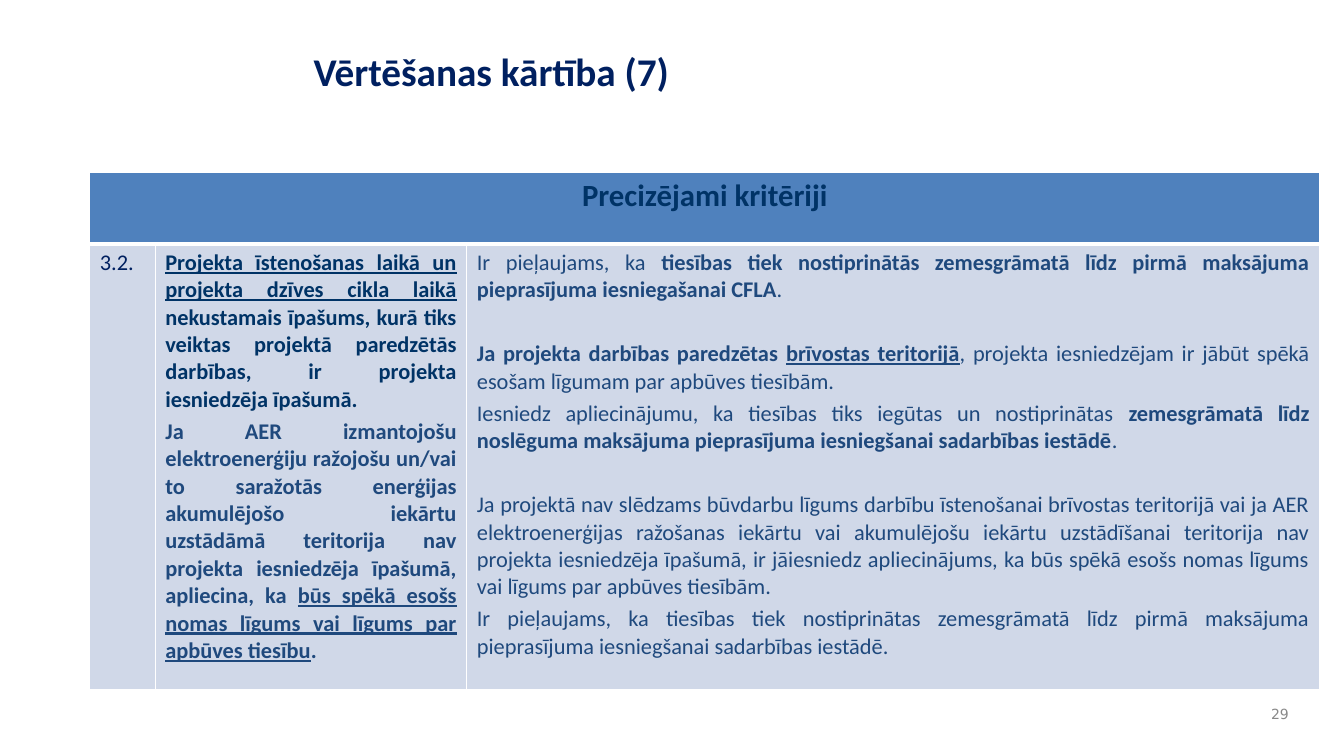
"""Build the slide on the criteria to be made more precise."""
import pptx
import pptx.util
import pptx.dml.color
import pptx.enum.text
import pptx.oxml
import pptx.oxml.ns
from dataclasses import dataclass

Inches = pptx.util.Inches
Pt = pptx.util.Pt
Align = pptx.enum.text.PP_ALIGN
Anchor = pptx.enum.text.MSO_ANCHOR


@dataclass
class Theme:
    """Hold the colours, fonts and type sizes."""
    font: str = "Calibri"
    plain: str = "DejaVu Sans"
    navy: str = "002060"
    deep: str = "003366"
    blue: str = "1F497D"
    grey: str = "898989"
    head: str = "4F81BD"
    pale: str = "D0D8E8"
    edge: str = "FFFFFF"
    title: int = 28
    band: int = 22
    body: int = 16
    small: int = 10
    near: float = 3.4
    far: float = 26.2


@dataclass
class Para:
    """Hold the runs, colour and spacing of one paragraph."""
    runs: list
    color: str
    bold: bool = False
    gap: float = 0
    align: int = Align.JUSTIFY


class Deck:
    """Draw the elements of the slide in one style."""

    def __init__(self, theme):
        """Start a wide deck with one title-only slide."""
        self.theme = theme
        self.deck = pptx.Presentation()
        self.deck.slide_width = Inches(13.33)
        self.deck.slide_height = Inches(7.5)
        self.slide = self.deck.slides.add_slide(self.deck.slide_layouts[5])

    def style(self, font, size, color, bold=False, name=None):
        """Set the size, colour, weight and face of a font."""
        font.name = name or self.theme.font
        font.size = Pt(size)
        font.bold = bold
        font.color.rgb = pptx.dml.color.RGBColor.from_string(color)

    def title(self, text, box):
        """Place and format the title."""
        shape = self.slide.shapes.title
        shape.left, shape.top, shape.width, shape.height = map(Inches, box)
        frame = shape.text_frame
        frame.text = text
        frame.vertical_anchor = Anchor.TOP
        para = frame.paragraphs[0]
        para.alignment = Align.LEFT
        self.style(para.font, self.theme.title, self.theme.navy, True)

    def label(self, text, box):
        """Add a small right-aligned label."""
        frame = self.slide.shapes.add_textbox(*map(Inches, box)).text_frame
        frame.word_wrap = True
        frame.vertical_anchor = Anchor.MIDDLE
        para = frame.paragraphs[0]
        para.text = text
        para.alignment = Align.RIGHT
        self.style(para.font, self.theme.small, self.theme.grey,
                   name=self.theme.plain)

    def grid(self, left, top, cols, rows):
        """Add a table with the given column widths and row heights."""
        table = self.slide.shapes.add_table(
            len(rows), len(cols), Inches(left), Inches(top),
            Inches(sum(cols)), Inches(sum(rows))).table
        table.first_row = table.horz_banding = False
        for col, width in zip(table.columns, cols):
            col.width = Inches(width)
        for index, height in enumerate(rows):
            row = table.rows[index]
            row.height = Inches(height)
            top, base, color = ((3, 1, self.theme.pale) if index
                                else (1, 3, self.theme.head))
            for cell in row.cells:
                self.edges(cell, top, base)
                self.paint(cell, color)
        return table

    def paint(self, cell, color):
        """Fill a cell."""
        cell.fill.solid()
        cell.fill.fore_color.rgb = pptx.dml.color.RGBColor.from_string(color)

    def edges(self, cell, top, base):
        """Draw the borders of a cell."""
        props = cell._tc.get_or_add_tcPr()
        for side, width in zip("LRTB", (1, 1, top, base)):
            props.append(pptx.oxml.parse_xml(
                f'<a:ln{side} {pptx.oxml.ns.nsdecls("a")} w="{Pt(width)}">'
                f'<a:solidFill><a:srgbClr val="{self.theme.edge}"/>'
                f'</a:solidFill></a:ln{side}>'))

    def prose(self, cell, paras, size):
        """Put paragraphs in a cell; b and u mark bold and underline."""
        frame = cell.text_frame
        for index, item in enumerate(paras):
            para = frame.add_paragraph() if index else frame.paragraphs[0]
            para.alignment = item.align
            if index:
                para.space_before = Pt(item.gap)
            self.style(para.font, size, item.color, item.bold)
            for text, marks in item.runs:
                run = para.add_run()
                run.text = text
                if "b" in marks:
                    run.font.bold = True
                if "u" in marks:
                    run.font.underline = True


def main():
    """Build and save the slide."""
    look = Theme()
    deck = Deck(look)
    deck.title("Vērtēšanas kārtība (7)", (3.01, 0.42, 9.65, 1.13))
    table = deck.grid(0.89, 1.71, (0.65, 3.09, 8.46), (0.71, 4.42))
    table.cell(0, 0).merge(table.cell(0, 2))
    deck.prose(table.cell(0, 0), [
        Para([("Precizējami kritēriji", "")], look.deep, True,
             align=Align.CENTER)], look.band)

    mark = [Para([("3.2.", "")], look.navy, align=Align.LEFT)]
    rule = [
        Para([("Projekta īstenošanas laikā un projekta dzīves cikla laikā ", "u"),
              ("nekustamais īpašums, kurā tiks veiktas projektā paredzētās "
               "darbības, ir projekta iesniedzēja īpašumā. ", "")],
             look.deep, True),
        Para([("Ja AER izmantojošu elektroenerģiju ražojošu un/vai to saražotās "
               "enerģijas akumulējošo iekārtu uzstādāmā teritorija nav projekta "
               "iesniedzēja īpašumā, apliecina, ka ", ""),
              ("būs spēkā esošs nomas līgums vai līgums par apbūves tiesību", "u"),
              (".", "")], look.blue, True, look.near)]
    notes = [
        Para([("Ir pieļaujams, ka ", ""),
              ("tiesības tiek nostiprinātās zemesgrāmatā līdz pirmā maksājuma "
               "pieprasījuma iesniegašanai CFLA", "b"), (".", "")], look.blue),
        Para([("Ja projekta darbības paredzētas ", "b"),
              ("brīvostas teritorijā", "bu"),
              (", projekta iesniedzējam ir jābūt spēkā esošam līgumam par "
               "apbūves tiesībām.", "")], look.blue, gap=look.far),
        Para([("Iesniedz apliecinājumu, ka tiesības tiks iegūtas un "
               "nostiprinātas ", ""),
              ("zemesgrāmatā līdz noslēguma maksājuma pieprasījuma iesniegšanai "
               "sadarbības iestādē", "b"), (". ", "")],
             look.blue, gap=look.near),
        Para([("Ja projektā nav slēdzams būvdarbu līgums darbību īstenošanai "
               "brīvostas teritorijā vai ja AER elektroenerģijas ražošanas "
               "iekārtu vai akumulējošu iekārtu uzstādīšanai teritorija nav "
               "projekta iesniedzēja īpašumā, ir jāiesniedz apliecinājums, ka "
               "būs spēkā esošs nomas līgums vai līgums par apbūves "
               "tiesībām. ", "")], look.blue, gap=look.far),
        Para([("Ir pieļaujams, ka tiesības tiek nostiprinātas zemesgrāmatā līdz "
               "pirmā maksājuma pieprasījuma iesniegšanai sadarbības "
               "iestādē.", "")], look.blue, gap=look.near)]
    for col, paras in enumerate((mark, rule, notes)):
        deck.prose(table.cell(1, col), paras, look.body)

    deck.label("29", (12.44, 6.92, 0.44, 0.33))
    deck.deck.save("out.pptx")


if __name__ == "__main__":
    main()
